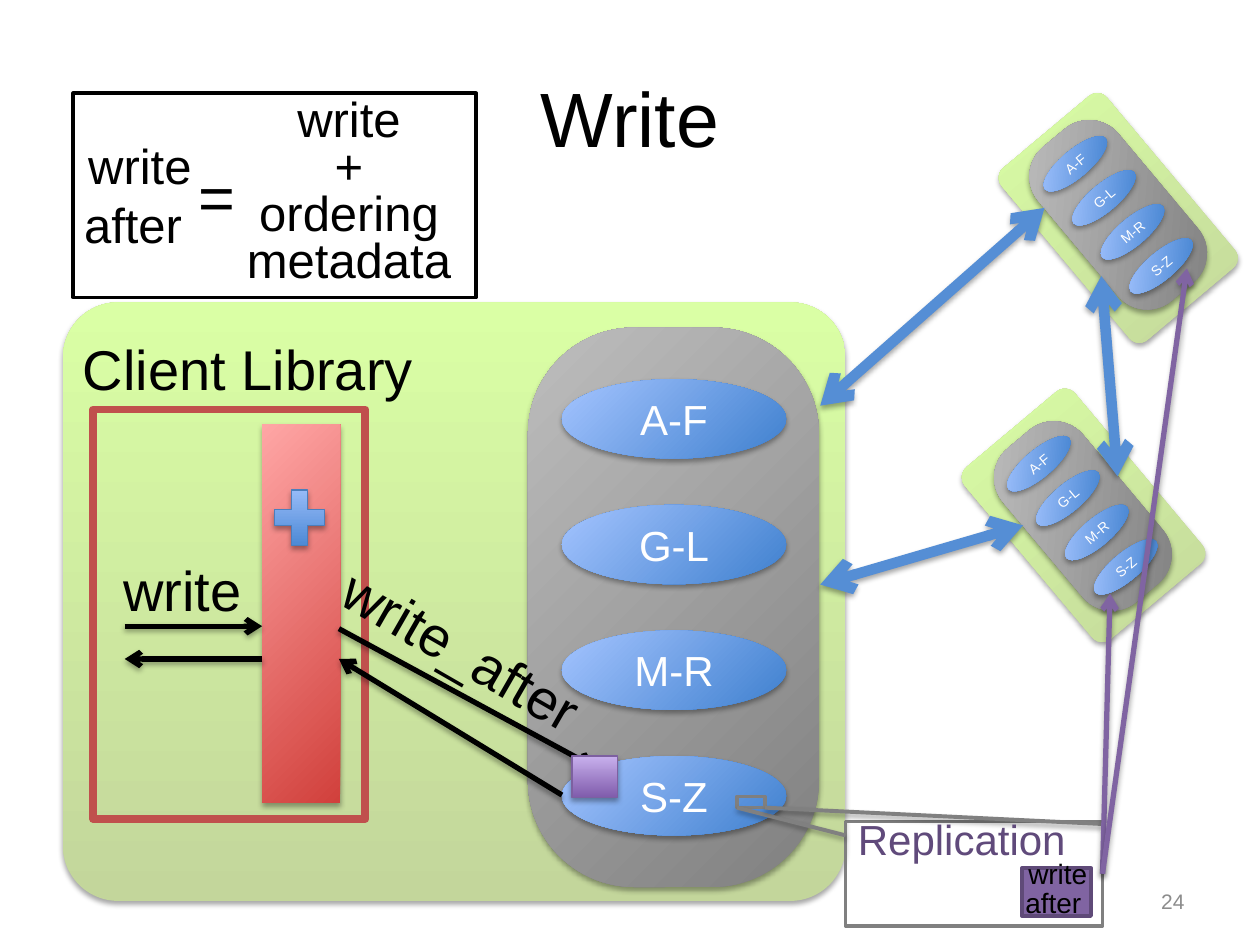
from lxml import etree
from pptx import Presentation, util as u
from pptx.dml.color import RGBColor
from pptx.enum import shapes, text
from pptx.oxml.ns import qn

S, A = shapes.MSO_SHAPE, text.PP_ALIGN
MID, TOP = text.MSO_ANCHOR.MIDDLE, text.MSO_ANCHOR.TOP
GREEN = ("C3D69B", "DAFFA5", 270)
GREY = ("808080", "BDBDBD", 225)
BLUE = ("3F80CE", "A4C4FF", 225)
RED = ("D1403C", "FFA6A5", 225)
PLUS = ("3F80CE", "A4C4FF", 270)
PURPLE = ("7F5BAB", "C8B0ED", 270)

KEYS = ["A-F", "G-L", "M-R", "S-Z"]
# library box, store box, corner radius pair, first node, node step, font size, rotation
DATACENTERS = [
    ((0.5, 2.4, 6.21, 4.75), (4.19, 2.6, 2.31, 4.44), (4.46, 3.01, 1.78, 0.63), (0, 0.997), 24, 0),
    ((8.33, 0.84, 1.09, 1.78), (8.46, 0.91, 0.83, 1.59), (8.22, 1.19, 0.63, 0.22), (0.227, 0.27), 8, 320),
    ((8.03, 3.2, 1.14, 1.78), (8.18, 3.3, 0.83, 1.59), (7.93, 3.57, 0.63, 0.22), (0.23, 0.273), 8, 320),
]
BOXES = {
    "cache": (S.RECTANGLE, (2.08, 3.37, 0.62, 3), RED, None),
    "client": (S.RECTANGLE, (0.74, 3.25, 2.16, 3.25), None, ("C0504D", 4.5)),
    "replication": (S.RECTANGLE, (6.71, 6.52, 2.04, 0.83), None, ("808080", 2)),
    "callout source": (S.RECTANGLE, (5.85, 6.32, 0.22, 0.09), None, ("7F7F7F", 2)),
    "replicated write": (S.RECTANGLE, (8.11, 6.89, 0.55, 0.38), "8064A2", ("5F4A78", 2)),
    "definition": (S.RECTANGLE, (0.58, 0.74, 3.2, 1.62), None, ("000000", 2)),
}
PACKETS = {
    "metadata": (S.MATH_PLUS, (2.11, 3.81, 0.54, 0.6), PLUS, ("4B7EBC", 0.75)),
    "write packet": (S.RECTANGLE, (4.54, 6, 0.36, 0.33), PURPLE, ("7D60A0", 0.75)),
}
LINES = [
    ("558ED5", 6, ("headEnd", "tailEnd"), [
        (6.51, 3.22, 8.29, 1.65), (8.87, 3.78, 8.74, 2.19), (6.51, 4.64, 8.12, 4.17)]),
    ("000000", 3, ("tailEnd",), [
        (4.46, 6.31, 2.69, 5.23), (2.08, 5.23, 0.99, 5.23),
        (0.99, 4.97, 2.08, 4.97), (2.69, 4.99, 4.72, 6.09)]),
    ("808080", 2.25, (), [(6.71, 6.63, 5.85, 6.41), (8.75, 6.54, 6.07, 6.41)]),
]
REPLICATION_ENDS = [(8.81, 4.71), (9.42, 2.13)]
LABELS = [
    ((7.17, 6.95, 2.33, 0.4), ["24"], dict(size=12, color="8C8C8C", align=A.RIGHT, anchor=MID)),
    ((0.56, 2.61, 3.22, 0.64), ["Client Library"], dict(size=32)),
    ((0.88, 4.36, 1.23, 0.64), ["write"], dict(size=32, wrap=False)),
    ((2.52, 4.87, 2.4, 0.64), ["write_after"], dict(size=32, wrap=False, rotation=30)),
    ((6.71, 6.41, 1.95, 0.5), ["Replication"], dict(size=24, color="604A7B", wrap=False)),
    ((1.76, 0.74, 2.02, 1.62), ["write", "+", "ordering", "metadata"],
     dict(size=28, align=A.CENTER, spacing=0.8)),
    ((0.5, 1.03, 1.22, 1.04), ["write", "after "], dict(size=28, align=A.CENTER)),
    ((1.17, 1.2, 1.1, 0.71), ["="], dict(size=36, align=A.CENTER)),
]


def rgb(value):
    """Turn a hex string into a colour."""
    return RGBColor.from_string(value)


def add_shadow(sp, alpha=35):
    """Give a shape or connector a soft shadow straight below it."""
    pr = sp._element.spPr
    for old in pr.findall(qn("a:effectLst")):
        pr.remove(old)
    effects = etree.SubElement(pr, qn("a:effectLst"))
    outer = etree.SubElement(effects, qn("a:outerShdw"), blurRad=str(u.Pt(3.1)),
                             dist=str(u.Pt(1.8)), dir="5400000", rotWithShape="0")
    color = etree.SubElement(outer, qn("a:srgbClr"), val="000000")
    etree.SubElement(color, qn("a:alpha"), val=str(alpha * 1000))


def write(tf, lines, size, color="000000", align=A.LEFT, anchor=TOP, wrap=True, spacing=None):
    """Fill a text frame with one paragraph per line."""
    tf.word_wrap, tf.vertical_anchor = wrap, anchor
    for i, line in enumerate(lines):
        p = tf.add_paragraph() if i else tf.paragraphs[0]
        p.alignment, p.line_spacing = align, spacing
        r = p.add_run()
        r.text = line
        r.font.color.rgb = rgb(color)
        for name, value in dict(name="Arial", size=u.Pt(size)).items():
            setattr(r.font, name, value)


def add_box(s, kind, at, fill=None, line=None, rotation=0, radius=None):
    """Add a preset shape with a flat, gradient or empty fill."""
    sp = s.shapes.add_shape(kind, *map(u.Inches, at))
    sp.shadow.inherit = False
    sp.rotation = rotation
    if radius:
        sp.adjustments[0] = radius
    if isinstance(fill, tuple):
        *colors, angle = fill
        sp.fill.gradient()
        sp.fill.gradient_angle = 360 - angle
        for stop, color, position in zip(sp.fill.gradient_stops, colors, (0, 1)):
            stop.color.rgb, stop.position = rgb(color), position
    elif fill:
        sp.fill.solid()
        sp.fill.fore_color.rgb = rgb(fill)
    else:
        sp.fill.background()
    if line:
        sp.line.color.rgb, sp.line.width = rgb(line[0]), u.Pt(line[1])
    else:
        sp.line.fill.background()
    if isinstance(fill, tuple):
        add_shadow(sp)
    return sp


def add_line(s, ends, color, width, heads=()):
    """Add a straight connector with open arrowheads."""
    sp = s.shapes.add_connector(shapes.MSO_CONNECTOR.STRAIGHT, *map(u.Inches, ends))
    sp.line.color.rgb, sp.line.width = rgb(color), u.Pt(width)
    for head in heads:
        etree.SubElement(sp.line._get_or_add_ln(), qn("a:" + head), type="arrow")
    add_shadow(sp)
    return sp


def add_label(s, at, lines, rotation=0, **style):
    """Add a text box."""
    sp = s.shapes.add_textbox(*map(u.Inches, at))
    sp.rotation = rotation
    write(sp.text_frame, lines, **style)
    return sp


def add_datacenter(s, library, store, node, step, size, rotation):
    """Add a client library box, its store and the key-range nodes."""
    add_box(s, S.ROUNDED_RECTANGLE, library, GREEN, rotation=rotation, radius=0.092)
    add_box(s, S.ROUNDED_RECTANGLE, store, GREY, rotation=rotation, radius=0.365)
    x, y, w, h = node
    for i, key in enumerate(KEYS):
        at = (x + i * step[0], y + i * step[1], w, h)
        sp = add_box(s, S.OVAL, at, BLUE, rotation=rotation)
        write(sp.text_frame, [key], size, "FFFFFF", A.CENTER, MID, wrap=False)


def main():
    """Build the slide and save it."""
    prs = Presentation()
    prs.slide_width, prs.slide_height = u.Inches(10), u.Inches(7.5)
    s = prs.slides.add_slide(prs.slide_layouts[5])
    title = s.shapes.title
    for name, value in dict(left=0.5, top=0.3, width=9, height=1.25).items():
        setattr(title, name, u.Inches(value))
    write(title.text_frame, ["Write"], 44, align=A.CENTER, anchor=MID)
    for datacenter in DATACENTERS:
        add_datacenter(s, *datacenter)
    boxes = {name: add_box(s, *box) for name, box in BOXES.items()}
    for color, width, heads, lines in LINES:
        for ends in lines:
            add_line(s, ends, color, width, heads)
    for end in REPLICATION_ENDS:
        sp = add_line(s, (8.75, 6.94, *end), "8064A2", 3, ("tailEnd",))
        sp.begin_connect(boxes["replication"], 3)
    for packet in PACKETS.values():
        add_box(s, *packet)
    for at, lines, style in LABELS:
        add_label(s, at, lines, **style)
    sp = add_label(s, (8.04, 6.95, 0.71, 0.4), ["write", "after"], size=16, wrap=False)
    first = sp.text_frame.paragraphs[0]
    first.alignment, first.line_spacing = A.CENTER, 0.1
    prs.save("out.pptx")


if __name__ == "__main__":
    main()
